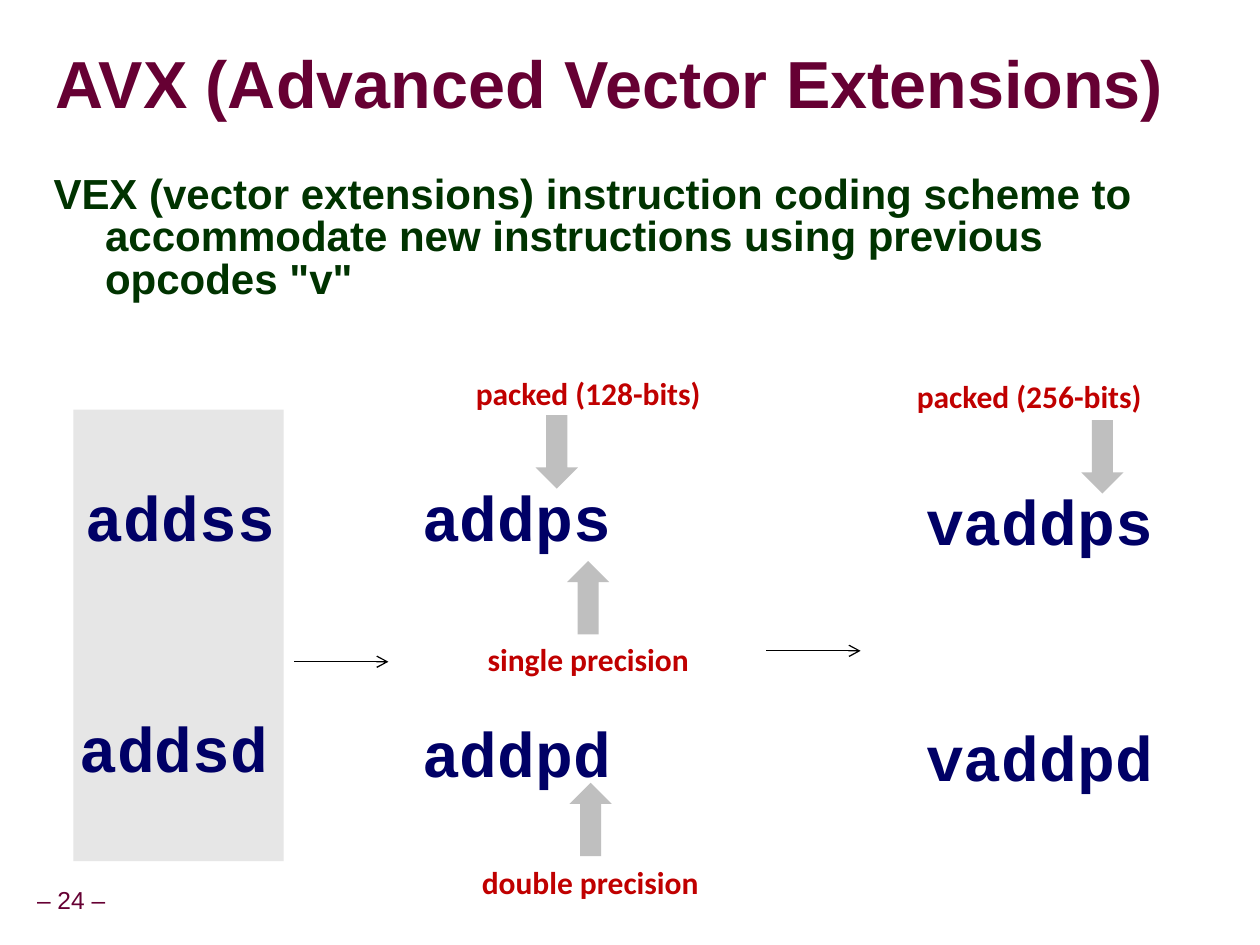
from lxml.etree import SubElement
from pptx import Presentation
from pptx.dml.color import RGBColor
from pptx.enum.shapes import MSO_CONNECTOR, MSO_SHAPE
from pptx.enum.text import MSO_ANCHOR, PP_ALIGN
from pptx.oxml.ns import qn
from pptx.util import Cm, Pt

MAROON = RGBColor(0x66, 0x00, 0x33)
GREEN = RGBColor(0x00, 0x33, 0x00)
NAVY = RGBColor(0x00, 0x00, 0x66)
RED = RGBColor(0xC0, 0x00, 0x00)
PANEL = RGBColor(0xE6, 0xE6, 0xE6)
GREY = RGBColor(0xBF, 0xBF, 0xBF)
BLACK = RGBColor(0x00, 0x00, 0x00)


class Deck:
    def __init__(self, prs):
        self.s = prs.slides.add_slide(prs.slide_layouts[5])

    def add_text(self, tf, text, size, color, font="Arial", bold=True,
                 align=PP_ALIGN.LEFT):
        p = tf.paragraphs[0]
        p.alignment = align
        r = p.add_run()
        r.text = text
        r.font.name, r.font.size, r.font.bold = font, Pt(size), bold
        r.font.color.rgb = color
        return p

    def title(self, text):
        sp = self.s.shapes.title
        sp.left, sp.top, sp.width, sp.height = Cm(1.12), Cm(0.69), Cm(24.2), Cm(2.16)
        tf = sp.text_frame
        tf.margin_left = tf.margin_right = tf.margin_top = tf.margin_bottom = 0
        tf.vertical_anchor = MSO_ANCHOR.MIDDLE
        self.add_text(tf, text, 38, MAROON).line_spacing = 0.87

    def box(self, x, y, w, h, wrap=True):
        tf = self.s.shapes.add_textbox(Cm(x), Cm(y), Cm(w), Cm(h)).text_frame
        tf.word_wrap = wrap
        return tf

    def body(self, text):
        p = self.add_text(self.box(0.81, 3.4, 23.06, 14.5), text, 24, GREEN)
        p.line_spacing, p.space_before = 0.85, Pt(15)
        pPr = p._p.get_or_add_pPr()
        pPr.set("marL", str(Cm(1.06)))
        pPr.set("indent", str(Cm(-1.04)))

    def page_number(self, text):
        tf = self.box(-0.23, 17.75, 3.33, 0.86, wrap=False)
        tf.margin_left = tf.margin_right = Cm(0.13)
        tf.vertical_anchor = MSO_ANCHOR.MIDDLE
        self.add_text(tf, text, 14, MAROON, bold=False,
                      align=PP_ALIGN.CENTER).line_spacing = 0.9

    def opcode(self, text, x, y):
        width = 0.5 + 0.763 * len(text)
        self.add_text(self.box(x, y, width, 1.79, wrap=False), text, 36, NAVY,
                      "Courier New")

    def label(self, text, x, y, w):
        self.add_text(self.box(x, y, w, 1.03), text, 18, RED, "Calibri",
                      align=PP_ALIGN.CENTER)

    def shape(self, kind, x, y, w, h, color):
        sp = self.s.shapes.add_shape(kind, Cm(x), Cm(y), Cm(w), Cm(h))
        sp.shadow.inherit = False
        sp.fill.solid()
        sp.fill.fore_color.rgb = color
        sp.line.fill.background()
        return sp

    def pointer(self, x, y, up=False):
        sp = self.shape(MSO_SHAPE.DOWN_ARROW, x, y, 0.85, 1.48, GREY)
        sp.rotation = 180 if up else 0

    def arrow(self, x, y, length=1.9):
        c = self.s.shapes.add_connector(MSO_CONNECTOR.STRAIGHT, Cm(x), Cm(y),
                                        Cm(x + length), Cm(y))
        c.line.color.rgb = BLACK
        c.line.width = Pt(0.75)
        spPr = c._element.spPr
        SubElement(spPr.get_or_add_ln(), qn("a:tailEnd"), type="arrow")
        SubElement(spPr, qn("a:effectLst"))


def main():
    prs = Presentation()
    prs.slide_width, prs.slide_height = Cm(25.4), Cm(19.05)
    deck = Deck(prs)

    deck.page_number("– 24 –")
    deck.title("AVX (Advanced Vector Extensions)")
    deck.body("VEX (vector extensions) instruction coding scheme to "
              'accommodate new instructions using previous opcodes "v"')

    deck.shape(MSO_SHAPE.RECTANGLE, 1.48, 8.26, 4.24, 9.1, PANEL)
    for text, x, y in [("addss", 1.48, 9.52), ("addsd", 1.35, 14.18),
                       ("addps", 8.26, 9.52), ("addpd", 8.26, 14.28),
                       ("vaddps", 18.42, 9.6), ("vaddpd", 18.42, 14.36)]:
        deck.opcode(text, x, y)

    for text, x, y, w in [("packed (128-bits)", 8.26, 7.41, 7.2),
                          ("packed (256-bits)", 17.15, 7.48, 7.2),
                          ("single precision", 9.53, 12.78, 4.66),
                          ("double precision", 9.31, 17.28, 5.18)]:
        deck.label(text, x, y, w)

    for x, y, up in [(10.8, 8.37, False), (21.8, 8.47, False),
                     (11.43, 11.31, True), (11.48, 15.78, True)]:
        deck.pointer(x, y, up)

    deck.arrow(5.93, 13.34)
    deck.arrow(15.45, 13.12)

    prs.save("out.pptx")


if __name__ == "__main__":
    main()
